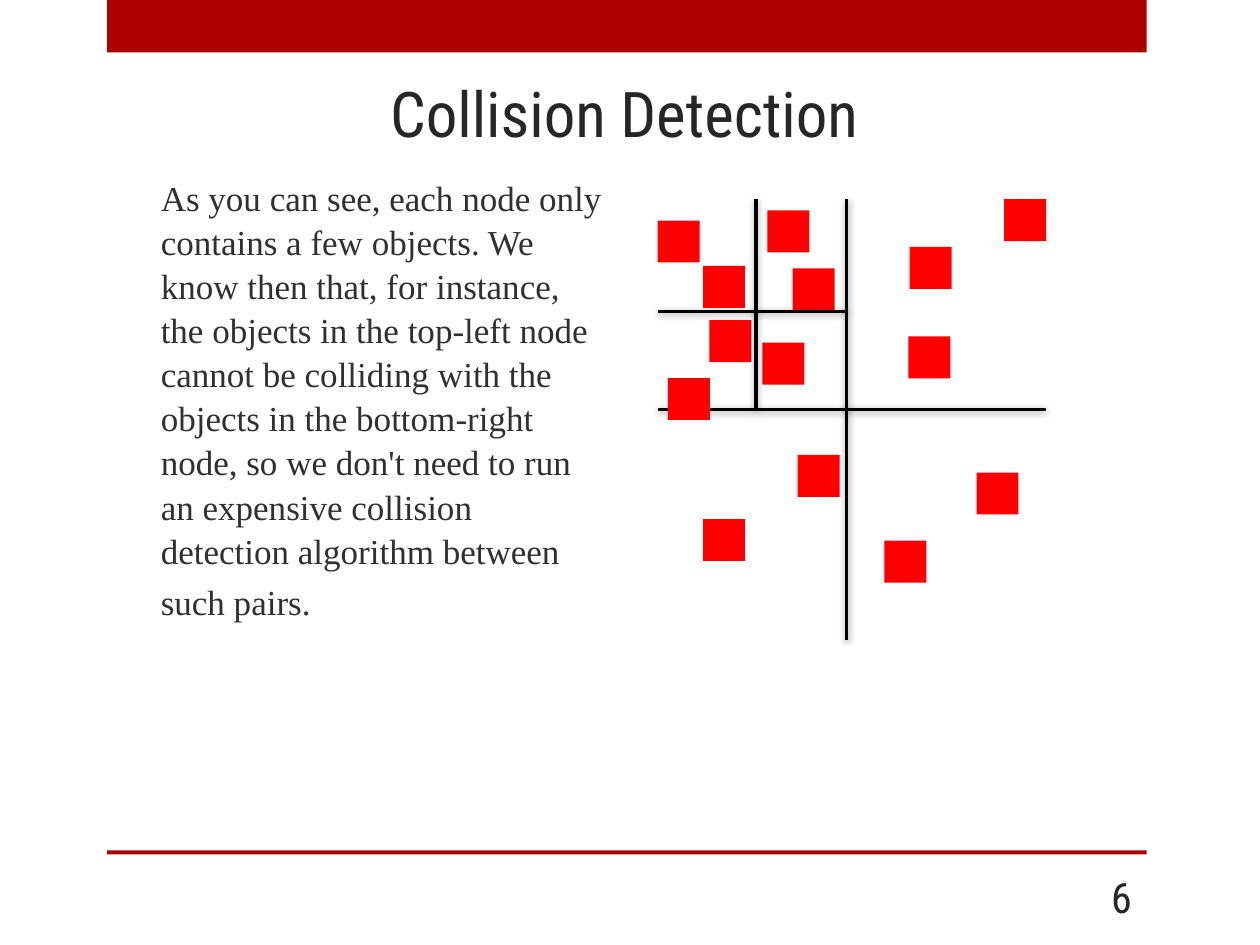
"""Build the Collision Detection slide with its quadtree diagram."""
from dataclasses import dataclass

from lxml import etree
from pptx import Presentation
from pptx.dml.color import RGBColor
from pptx.enum.shapes import MSO_CONNECTOR, MSO_SHAPE
from pptx.enum.text import MSO_ANCHOR, PP_ALIGN
from pptx.oxml.ns import qn
from pptx.util import Pt

STRAIGHT = MSO_CONNECTOR.STRAIGHT
RECTANGLE = MSO_SHAPE.RECTANGLE
TOP, MIDDLE = MSO_ANCHOR.TOP, MSO_ANCHOR.MIDDLE
LEFT, CENTER, RIGHT = PP_ALIGN.LEFT, PP_ALIGN.CENTER, PP_ALIGN.RIGHT


@dataclass(frozen=True)
class Theme:
    heading_font: str = "Roboto Condensed"
    body_font: str = "Times New Roman"
    title_size: int = 36
    body_size: int = 20
    number_size: int = 24
    band: str = "AD0101"
    heading: str = "262626"
    body: str = "303030"
    object: str = "FF0000"
    divider: str = "000000"
    divider_width: float = 1.75


THEME = Theme()

TITLE = "Collision Detection"
BODY = (
    "As you can see, each node only contains a few objects. We know then that, "
    "for instance, the objects in the top-left node cannot be colliding with the "
    "objects in the bottom-right node, so we don't need to run an expensive "
    "collision detection algorithm between such pairs."
)
PAGE_NUMBER = "6"

BANDS = [(61.2, 0, 594, 30), (61.2, 486, 594, 2.2)]
TITLE_BOX = (59.8, 38.2, 594, 51.8)
BODY_BOX = (59.8, 96, 294, 342)
NUMBER_BOX = (594, 498.2, 59.8, 28.8)

TREE_LEFT, TREE_TOP, TREE_RIGHT, TREE_BOTTOM = 375.8, 113.8, 597.6, 365.8
ROOT_X, ROOT_Y = 483.8, 234
CHILD_X, CHILD_Y = 432, 177.8
OBJECT_SIZE = 24

LEVELS = [
    {
        "dividers": [(ROOT_X, TREE_TOP, ROOT_X, TREE_BOTTOM),
                     (TREE_LEFT, ROOT_Y, TREE_RIGHT, ROOT_Y)],
        "objects": [(375.8, 126), (573.8, 113.8), (519.8, 141.1), (519.1, 192.2),
                    (558, 270), (505.4, 308.9), (455.8, 259.9), (381.6, 216),
                    (401.8, 296.6), (435.6, 195.8), (452.9, 153.4)],
    },
    {
        "dividers": [(CHILD_X, TREE_TOP, CHILD_X, ROOT_Y),
                     (TREE_LEFT, CHILD_Y, ROOT_X, CHILD_Y)],
        "objects": [(405.4, 182.9), (438.5, 120.2), (401.8, 151.9)],
    },
]


def points(values):
    return [Pt(value) for value in values]


def add_rectangle(slide, box, color):
    shape = slide.shapes.add_shape(RECTANGLE, *points(box))
    shape.shadow.inherit = False
    shape.fill.solid()
    shape.fill.fore_color.rgb = RGBColor.from_string(color)
    shape.line.fill.background()


def add_divider(slide, ends):
    connector = slide.shapes.add_connector(STRAIGHT, *points(ends))
    connector.line.color.rgb = RGBColor.from_string(THEME.divider)
    connector.line.width = Pt(THEME.divider_width)
    properties = connector._element.spPr
    effects = etree.SubElement(properties, qn("a:effectLst"))
    shadow = etree.SubElement(effects, qn("a:outerShdw"), blurRad=str(Pt(4)),
                              dist=str(Pt(1)), dir="5280000", rotWithShape="0")
    color = etree.SubElement(shadow, qn("a:srgbClr"), val=THEME.divider)
    etree.SubElement(color, qn("a:alpha"), val="40000")


def set_text(shape, text, font, size, color, alignment, anchor):
    frame = shape.text_frame
    frame.word_wrap = True
    frame.vertical_anchor = anchor
    paragraph = frame.paragraphs[0]
    paragraph.text = text
    paragraph.alignment = alignment
    paragraph.font.name = font
    paragraph.font.size = Pt(size)
    paragraph.font.color.rgb = RGBColor.from_string(color)
    return paragraph


def add_title(slide):
    title = slide.shapes.title
    title.left, title.top, title.width, title.height = points(TITLE_BOX)
    set_text(title, TITLE, THEME.heading_font, THEME.title_size,
             THEME.heading, CENTER, MIDDLE)


def add_body(slide):
    box = slide.shapes.add_textbox(*points(BODY_BOX))
    paragraph = set_text(box, BODY, THEME.body_font, THEME.body_size,
                         THEME.body, LEFT, TOP)
    paragraph.space_before = Pt(4)
    paragraph.line_spacing = 1.05
    paragraph._p.get_or_add_pPr().set("marL", str(Pt(25)))
    ending = paragraph.add_run()
    ending.text = " "
    ending.font.size = Pt(THEME.number_size)


def add_page_number(slide):
    box = slide.shapes.add_textbox(*points(NUMBER_BOX))
    set_text(box, PAGE_NUMBER, THEME.heading_font, THEME.number_size,
             THEME.heading, RIGHT, MIDDLE)


def main():
    presentation = Presentation()
    presentation.slide_width, presentation.slide_height = Pt(720), Pt(540)
    slide = presentation.slides.add_slide(presentation.slide_layouts[5])
    for band in BANDS:
        add_rectangle(slide, band, THEME.band)
    add_title(slide)
    add_body(slide)
    add_page_number(slide)
    for level in LEVELS:
        for ends in level["dividers"]:
            add_divider(slide, ends)
        for left, top in level["objects"]:
            add_rectangle(slide, (left, top, OBJECT_SIZE, OBJECT_SIZE), THEME.object)
    presentation.save("out.pptx")


if __name__ == "__main__":
    main()
